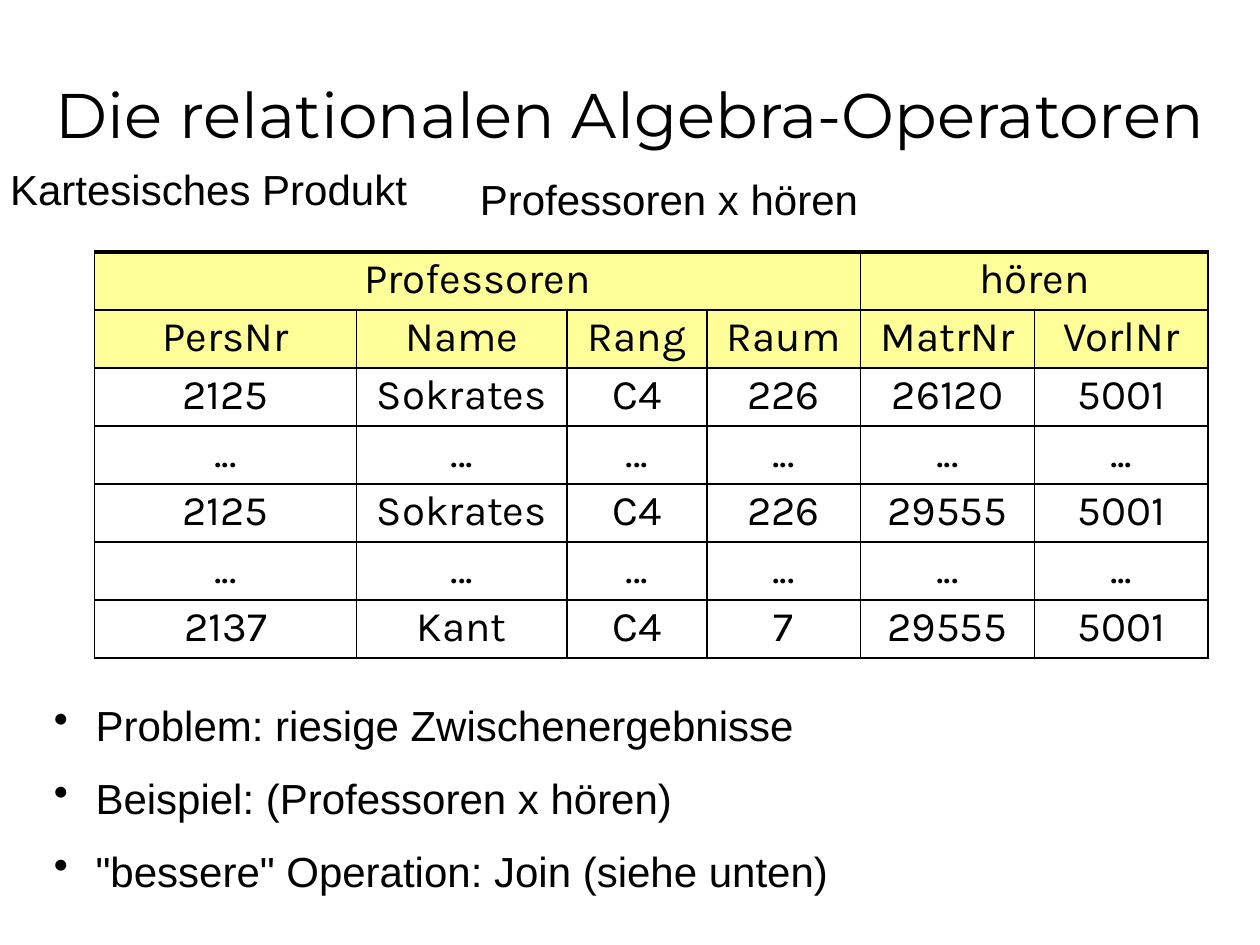
from dataclasses import dataclass

from lxml.etree import SubElement
from pptx import Presentation
from pptx.dml.color import RGBColor
from pptx.enum.text import MSO_ANCHOR, PP_ALIGN
from pptx.oxml.ns import qn
from pptx.util import Inches, Pt


@dataclass(frozen=True)
class Theme:
    """Colours, fonts and type sizes of the slide."""
    ink: str = "000000"
    header: str = "FFFF99"
    paper: str = "FFFFFF"
    title_font: str = "Montserrat"
    table_font: str = "Karla"
    body_font: str = "Arial"
    title_size: int = 36
    body_size: int = 24
    rule: float = 1
    top_rule: float = 2.25


THEME = Theme()
COLUMNS = (2.08, 1.67, 1.11, 1.22, 1.38, 1.38)
GROUPS = ((0, 3, "Professoren"), (4, 5, "hören"))
GAP = ("...",) * len(COLUMNS)
ROWS = (
    ("PersNr", "Name", "Rang", "Raum", "MatrNr", "VorlNr"),
    ("2125", "Sokrates", "C4", "226", "26120", "5001"),
    GAP,
    ("2125", "Sokrates", "C4", "226", "29555", "5001"),
    GAP,
    ("2137", "Kant", "C4", "7", "29555", "5001"),
)
BULLETS = (
    "Problem: riesige Zwischenergebnisse",
    "Beispiel: (Professoren x hören)",
    '"bessere" Operation: Join (siehe unten)',
)


def write(tf, *lines, font=THEME.body_font, size=THEME.body_size,
          align=PP_ALIGN.CENTER, before=0, spacing=1.0, bullet=None, indent=0.33):
    """Write each line as a formatted paragraph of the text frame."""
    for i, line in enumerate(lines):
        p = tf.add_paragraph() if i else tf.paragraphs[0]
        p.alignment = align
        p.space_before = Pt(before)
        p.line_spacing = spacing
        r = p.add_run()
        r.text = line
        r.font.name = font
        r.font.size = Pt(size)
        r.font.color.rgb = RGBColor.from_string(THEME.ink)
        if bullet:
            pPr = p._p.get_or_add_pPr()
            pPr.set("marL", str(Inches(indent)))
            pPr.set("indent", str(-Inches(indent)))
            SubElement(pPr, qn("a:buChar"), char=bullet)


def add_text(s, box, *lines, wrap=True, anchor=MSO_ANCHOR.TOP, **fmt):
    """Place a text box with the given lines in the box."""
    tf = s.shapes.add_textbox(*map(Inches, box)).text_frame
    tf.word_wrap = wrap
    tf.vertical_anchor = anchor
    write(tf, *lines, **fmt)


def style_cell(cell, fill, top):
    """Set margins, borders and fill of a table cell."""
    cell.margin_left = cell.margin_right = 0
    cell.margin_top = cell.margin_bottom = Inches(0.05)
    tcPr = cell._tc.get_or_add_tcPr()
    for side, width in (("L", THEME.rule), ("R", THEME.rule), ("T", top), ("B", THEME.rule)):
        ln = SubElement(tcPr, qn(f"a:ln{side}"), w=str(Pt(width)))
        SubElement(SubElement(ln, qn("a:solidFill")), qn("a:srgbClr"), val=THEME.ink)
    cell.fill.solid()
    cell.fill.fore_color.rgb = RGBColor.from_string(fill)


def add_heading(s, box):
    """Place the title and the two captions below it."""
    left, top, width, height = box
    add_text(s, box, "Die relationalen Algebra-Operatoren", anchor=MSO_ANCHOR.BOTTOM,
             font=THEME.title_font, size=THEME.title_size)
    base = top + height
    add_text(s, (left - 0.02, base, 3.35, 0.5), "Kartesisches Produkt", wrap=False)
    add_text(s, (left + 3.71, base + 0.08, 3.2, 0.5), "Professoren x hören", wrap=False)


def add_product_table(s, box):
    """Place the product table with its grouped header in the box."""
    count = len(ROWS) + 1
    tbl = s.shapes.add_table(count, len(COLUMNS), *map(Inches, box)).table
    for col, width in zip(tbl.columns, COLUMNS):
        col.width = Inches(width)
    for row in tbl.rows:
        row.height = Inches(box[3] / count)
    for i in range(count):
        for j in range(len(COLUMNS)):
            style_cell(tbl.cell(i, j), THEME.header if i < 2 else THEME.paper,
                       THEME.rule if i else THEME.top_rule)
    fmt = dict(font=THEME.table_font, before=4.8, spacing=0.9)
    for first, last, name in GROUPS:
        tbl.cell(0, first).merge(tbl.cell(0, last))
        write(tbl.cell(0, first).text_frame, name, **fmt)
    for i, values in enumerate(ROWS, 1):
        for j, value in enumerate(values):
            write(tbl.cell(i, j).text_frame, value, **fmt)


def add_remarks(s, box):
    """Place the bulleted remarks in the box."""
    add_text(s, box, *BULLETS, align=PP_ALIGN.LEFT, before=13, bullet="•")


def main():
    """Build the slide and save it."""
    prs = Presentation()
    prs.slide_width, prs.slide_height = Inches(10), Inches(7.5)
    s = prs.slides.add_slide(prs.slide_layouts[6])
    add_heading(s, (0, 0, 10, 1.25))
    add_product_table(s, (0.75, 2, sum(COLUMNS), 3.15))
    add_remarks(s, (0.33, 5.5, 7.58, 1.7))
    prs.save("out.pptx")


if __name__ == "__main__":
    main()
